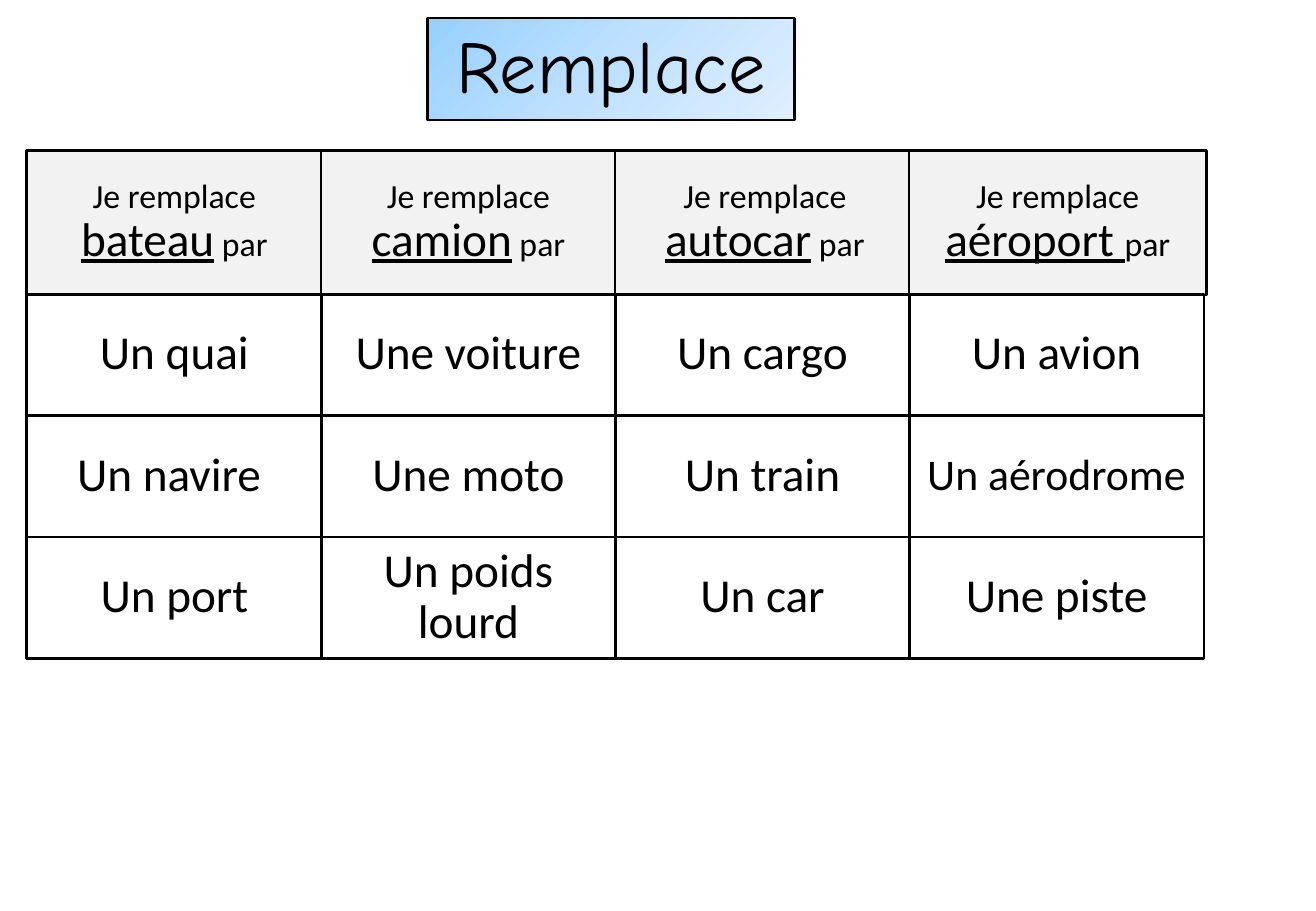
from copy import deepcopy

from pptx import Presentation
from pptx.dml.color import RGBColor
from pptx.enum.shapes import MSO_SHAPE
from pptx.enum.text import MSO_ANCHOR, PP_ALIGN
from pptx.oxml.ns import qn
from pptx.util import Inches, Pt

RECT = MSO_SHAPE.RECTANGLE
MIDDLE = MSO_ANCHOR.MIDDLE
CENTER = PP_ALIGN.CENTER

COLORS = {"ink": "000000", "head": "F2F2F2",
          "sky": "96D0FF", "mid": "BFE1FF", "pale": "E0EFFF"}
FONT = "Calibri"
LONG = "Un aérodrome"

# Word, text after it, header width, answers
COLUMNS = [
    ("bateau", " par", 2.43, ["Un quai", "Un navire ", "Un port"]),
    ("camion", " par", 2.43, ["Une voiture", "Une moto", "Un poids lourd"]),
    ("autocar", " par", 2.47, ["Un cargo", "Un train", "Un car"]),
    ("aéroport ", "par", 2.45, ["Un avion", LONG, "Une piste"]),
]


def color(name):
    return RGBColor.from_string(COLORS[name])


def add_box(slide, left, top, width, height, font, size):
    """Add an outlined rectangle; return it with its centred paragraph."""
    box = slide.shapes.add_shape(RECT, Inches(left), Inches(top),
                                 Inches(width), Inches(height))
    box.shadow.inherit = False
    box.fill.background()
    box.line.color.rgb = color("ink")
    box.line.width = Pt(1.5)
    box.text_frame.word_wrap = True
    box.text_frame.vertical_anchor = MIDDLE
    para = box.text_frame.paragraphs[0]
    para.alignment = CENTER
    para.line_spacing = 0.9
    para.font.name = font
    para.font.size = Pt(size)
    para.font.color.rgb = color("ink")
    return box, para


def add_run(para, text, size=None, under=None):
    run = para.add_run()
    run.text = text
    # Runs take the look of their paragraph, save for size and underline
    run.font.name = para.font.name
    run.font.size = Pt(size) if size else para.font.size
    run.font.color.rgb = color("ink")
    run.font.underline = under


def add_title(slide, left, top, width, height):
    box, para = add_box(slide, left, top, width, height, "Comic Neue", 44)
    add_run(para, "Remplace")
    # Three-stop diagonal gradient
    box.fill.gradient()
    box.fill.gradient_angle = 315
    stops = box._element.spPr.find(qn("a:gradFill")).find(qn("a:gsLst"))
    stops.insert(1, deepcopy(stops[0]))
    shades = [("sky", 0), ("mid", 0.5), ("pale", 1)]
    for stop, (name, place) in zip(box.fill.gradient_stops, shades):
        stop.color.rgb = color(name)
        stop.position = place


def add_column(slide, left, top, width, column):
    word, tail, wide, answers = column
    # Header
    box, para = add_box(slide, left, top, wide, 1.19, FONT, 20)
    box.fill.solid()
    box.fill.fore_color.rgb = color("head")
    para.space_before = Pt(10)
    add_run(para, "Je remplace ")
    add_run(para, word, 28, True)
    add_run(para, tail)
    # Answers
    for row, text in enumerate(answers):
        size = 25.9 if text == LONG else 28
        box, para = add_box(slide, left, top + 1.18 + row, width, 1, FONT, size)
        para.space_before = Pt(10)
        add_run(para, text)


def add_grid(slide, left, top, pitch):
    for index, column in enumerate(COLUMNS):
        add_column(slide, left + index * pitch, top, 2.43, column)


def main():
    prs = Presentation()
    prs.slide_width = Inches(10.83)
    prs.slide_height = Inches(7.5)
    slide = prs.slides.add_slide(prs.slide_layouts[6])
    add_title(slide, 3.52, 0.15, 3.02, 0.84)
    add_grid(slide, 0.22, 1.24, 2.42)
    prs.save("out.pptx")


if __name__ == "__main__":
    main()
